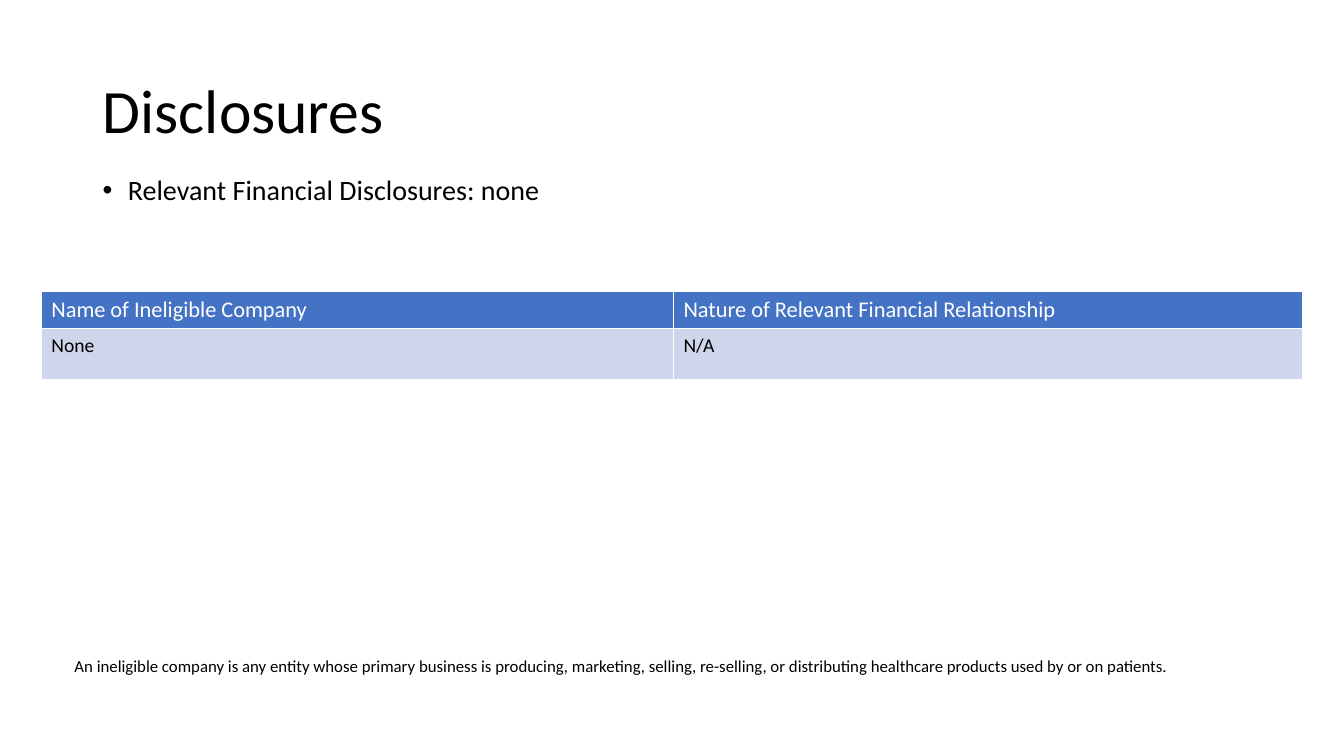
from dataclasses import dataclass
from typing import Any

from lxml.etree import SubElement
from pptx import Presentation
from pptx.dml.color import RGBColor
from pptx.enum.text import MSO_ANCHOR as Anchor, PP_ALIGN as Align
from pptx.oxml.ns import qn
from pptx.util import Inches, Pt

COLORS = {"text": "000000", "white": "FFFFFF", "header": "4472C4", "row": "CFD5EA"}
FONT = "Calibri"
COL_WIDTHS = (6.27, 6.24)
SIDES = ("a:lnL", "a:lnR", "a:lnT", "a:lnB")


@dataclass(frozen=True)
class Block:
    text: str
    box: tuple[float, float, float, float]
    size: int
    anchor: Any = Anchor.TOP
    spacing: float = 1.0
    bullet: bool = False


@dataclass(frozen=True)
class Row:
    texts: tuple[str, str]
    height: float
    size: int
    color: str
    fill: str


TITLE = Block("Disclosures", (0.92, 0.4, 11.5, 1.45), 44, Anchor.MIDDLE, 0.9)
BLOCKS = [
    Block("Relevant Financial Disclosures: none", (0.92, 1.7, 11.5, 4.76), 20,
          spacing=0.9, bullet=True),
    Block("An ineligible company is any entity whose primary business is producing, "
          "marketing, selling, re-selling, or distributing healthcare products "
          "used by or on patients.", (0.64, 6.46, 12.05, 0.3), 12),
]
ROWS = [
    Row(("Name of Ineligible Company", "Nature of Relevant Financial Relationship"),
        0.37, 16, "white", "header"),
    Row(("None", "N/A"), 0.51, 14, "text", "row"),
]


def set_text(tf: Any, text: str, size: int, color: str) -> Any:
    p = tf.paragraphs[0]
    r = p.add_run()
    r.text = text
    for key, value in {"name": FONT, "size": Pt(size), "bold": False}.items():
        setattr(r.font, key, value)
    r.font.color.rgb = RGBColor.from_string(COLORS[color])
    return p


def fill_block(sp: Any, block: Block) -> None:
    for key, value in zip(("left", "top", "width", "height"), block.box):
        setattr(sp, key, Inches(value))
    tf = sp.text_frame
    tf.word_wrap = True
    tf.vertical_anchor = block.anchor
    p = set_text(tf, block.text, block.size, "text")
    p.alignment = Align.LEFT
    p.line_spacing = block.spacing
    if block.bullet:
        pPr = p._p.get_or_add_pPr()
        pPr.set("marL", str(Inches(0.25)))
        pPr.set("indent", str(Inches(-0.25)))
        SubElement(pPr, qn("a:buFont"), typeface="Arial")
        SubElement(pPr, qn("a:buChar"), char="•")


def fill_cell(cell: Any, text: str, row: Row) -> None:
    set_text(cell.text_frame, text, row.size, row.color)
    tcPr = cell._tc.get_or_add_tcPr()
    for side in SIDES:
        ln = SubElement(tcPr, qn(side), w=str(Pt(1)))
        fill = SubElement(ln, qn("a:solidFill"))
        SubElement(fill, qn("a:srgbClr"), val=COLORS["white"])
    cell.fill.solid()
    cell.fill.fore_color.rgb = RGBColor.from_string(COLORS[row.fill])


def add_disclosures(s: Any) -> None:
    height = sum(row.height for row in ROWS)
    table = s.shapes.add_table(len(ROWS), len(COL_WIDTHS), Inches(0.41), Inches(2.89),
                               Inches(sum(COL_WIDTHS)), Inches(height)).table
    for column, width in zip(table.columns, COL_WIDTHS):
        column.width = Inches(width)
    for i, row in enumerate(ROWS):
        table.rows[i].height = Inches(row.height)
        for j, text in enumerate(row.texts):
            fill_cell(table.cell(i, j), text, row)


def main() -> None:
    prs = Presentation()
    prs.slide_width, prs.slide_height = Inches(13.33), Inches(7.5)
    s = prs.slides.add_slide(prs.slide_layouts[5])
    fill_block(s.shapes.title, TITLE)
    for block in BLOCKS:
        fill_block(s.shapes.add_textbox(0, 0, 0, 0), block)
    add_disclosures(s)
    prs.save("out.pptx")


if __name__ == "__main__":
    main()
